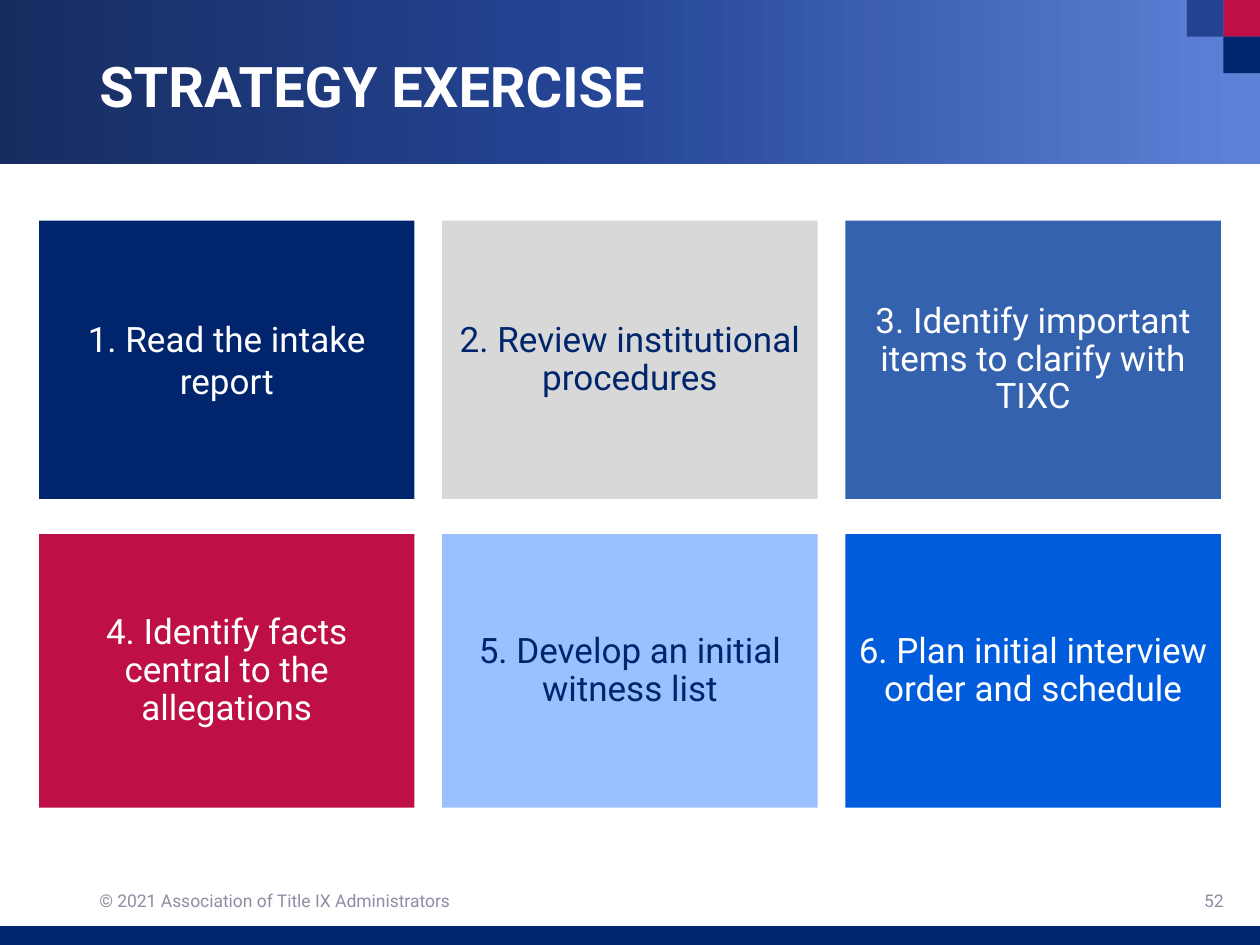
from copy import deepcopy

from pptx import Presentation
from pptx.dml.color import RGBColor
from pptx.enum.shapes import MSO_SHAPE
from pptx.enum.text import MSO_ANCHOR, PP_ALIGN
from pptx.oxml.ns import qn
from pptx.util import Inches, Pt

FONT = "Roboto"
WHITE = RGBColor(0xFF, 0xFF, 0xFF)
NAVY = RGBColor(0x00, 0x25, 0x6D)
CRIMSON = RGBColor(0xBE, 0x10, 0x47)
MID_BLUE = RGBColor(0x23, 0x42, 0x8F)
STEEL = RGBColor(0x34, 0x62, 0xAE)
SKY = RGBColor(0x9A, 0xC0, 0xFF)
BRIGHT = RGBColor(0x00, 0x5C, 0xDB)
LIGHT_GRAY = RGBColor(0xD8, 0xD8, 0xD8)
FOOTER_GRAY = RGBColor(0x8C, 0x8E, 0xA3)
BANNER_STOPS = [
    (0, RGBColor(0x17, 0x2C, 0x60)),
    (0.48, RGBColor(0x25, 0x46, 0x97)),
    (1, RGBColor(0x5F, 0x82, 0xD8)),
]

CARDS = [
    ("1. Read the intake report", NAVY, WHITE),
    ("2. Review institutional procedures", LIGHT_GRAY, NAVY),
    ("3. Identify important items to clarify with TIXC", STEEL, WHITE),
    ("4. Identify facts central to the allegations", CRIMSON, WHITE),
    ("5. Develop an initial witness list", SKY, NAVY),
    ("6. Plan initial interview order and schedule", BRIGHT, WHITE),
]
CARD_LEFT, CARD_WIDTH, CARD_PITCH = 0.31, 2.98, 3.2
CARD_ROWS = [(1.75, 2.21), (4.24, 2.17)]  # top, height
TILE = 0.29


def add_rect(slide, x, y, w, h, color=None):
    s = slide.shapes.add_shape(
        MSO_SHAPE.RECTANGLE, Inches(x), Inches(y), Inches(w), Inches(h))
    s.shadow.inherit = False
    s.line.fill.background()
    if color is not None:
        s.fill.solid()
        s.fill.fore_color.rgb = color
    return s


def write(shape, text, size, color, align=PP_ALIGN.LEFT, bold=False, spacing=1.0):
    tf = shape.text_frame
    tf.word_wrap = True
    tf.vertical_anchor = MSO_ANCHOR.MIDDLE
    p = tf.paragraphs[0]
    p.alignment = align
    p.line_spacing = spacing
    r = p.add_run()
    r.text = text
    r.font.name = FONT
    r.font.size = Pt(size)
    r.font.bold = bold
    r.font.color.rgb = color


def add_text(slide, x, y, w, h, *args, **kwargs):
    box = slide.shapes.add_textbox(Inches(x), Inches(y), Inches(w), Inches(h))
    write(box, *args, **kwargs)


def add_banner(slide):
    s = add_rect(slide, 0, 0, 10, 1.3)
    s.fill.gradient()
    s.fill.gradient_angle = 0
    stops = s._element.spPr.find(".//" + qn("a:gsLst"))
    stops.insert(1, deepcopy(stops[0]))
    for stop, (position, color) in zip(s.fill.gradient_stops, BANNER_STOPS):
        stop.position = position
        stop.color.rgb = color


def add_corner_tiles(slide):
    for col, row, color in [(1, 0, CRIMSON), (2, 0, MID_BLUE), (1, 1, NAVY)]:
        add_rect(slide, 10 - col * TILE, row * TILE, TILE, TILE, color)


def add_cards(slide):
    for i, (text, fill, color) in enumerate(CARDS):
        row, col = divmod(i, 3)
        top, height = CARD_ROWS[row]
        card = add_rect(slide, CARD_LEFT + col * CARD_PITCH, top,
                        CARD_WIDTH, height, fill)
        card.text_frame.margin_left = card.text_frame.margin_right = Inches(0.08)
        write(card, text, 20, color, PP_ALIGN.CENTER,
              spacing=1.0 if i == 0 else 0.9)


def main():
    prs = Presentation()
    prs.slide_width, prs.slide_height = Inches(10), Inches(7.5)
    slide = prs.slides.add_slide(prs.slide_layouts[6])
    add_banner(slide)
    add_corner_tiles(slide)
    add_rect(slide, 0, 7.35, 10, 0.15, NAVY)
    add_text(slide, 0.69, 0.3, 8.62, 0.82, "STRATEGY EXERCISE", 32, WHITE,
             bold=True, spacing=0.9)
    add_cards(slide)
    add_text(slide, 0.69, 6.95, 3.38, 0.4,
             "© 2021 Association of Title IX Administrators", 10, FOOTER_GRAY)
    add_text(slide, 7.56, 6.95, 2.25, 0.4, "52", 10, FOOTER_GRAY, PP_ALIGN.RIGHT)
    prs.save("out.pptx")


if __name__ == "__main__":
    main()
